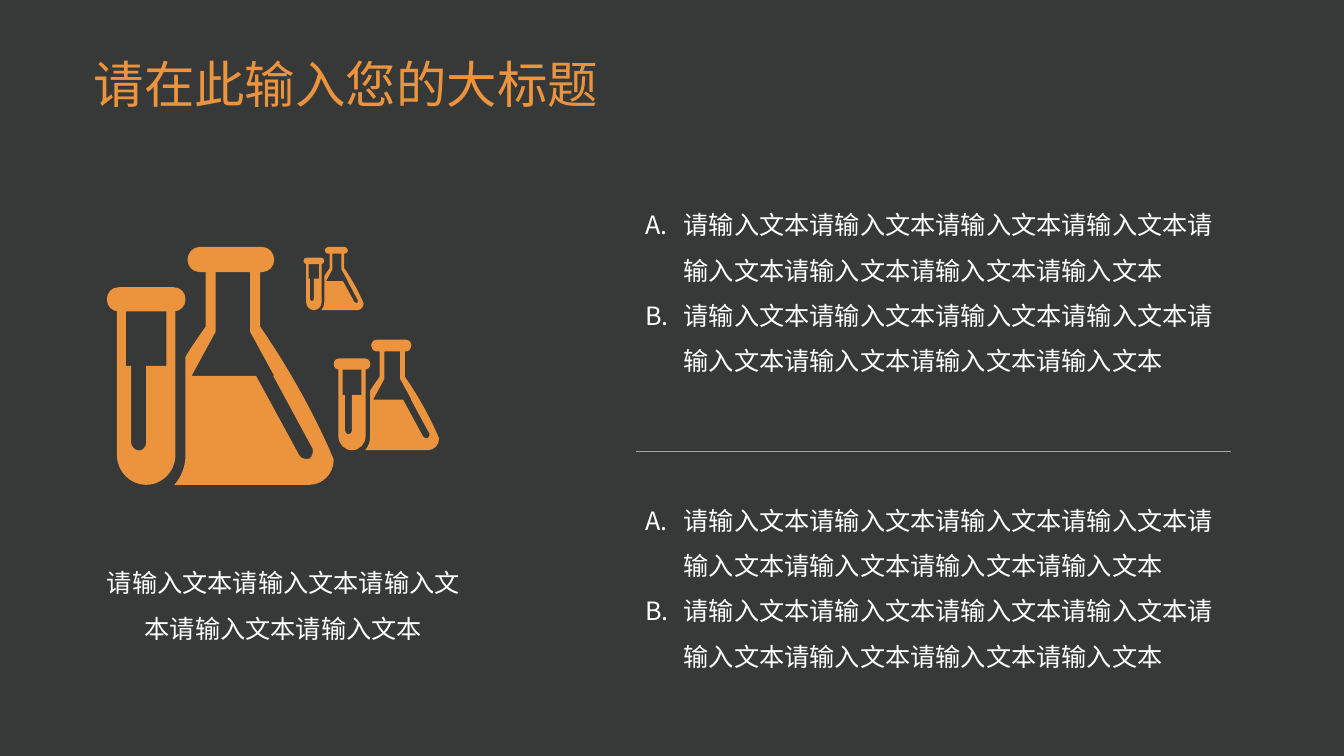
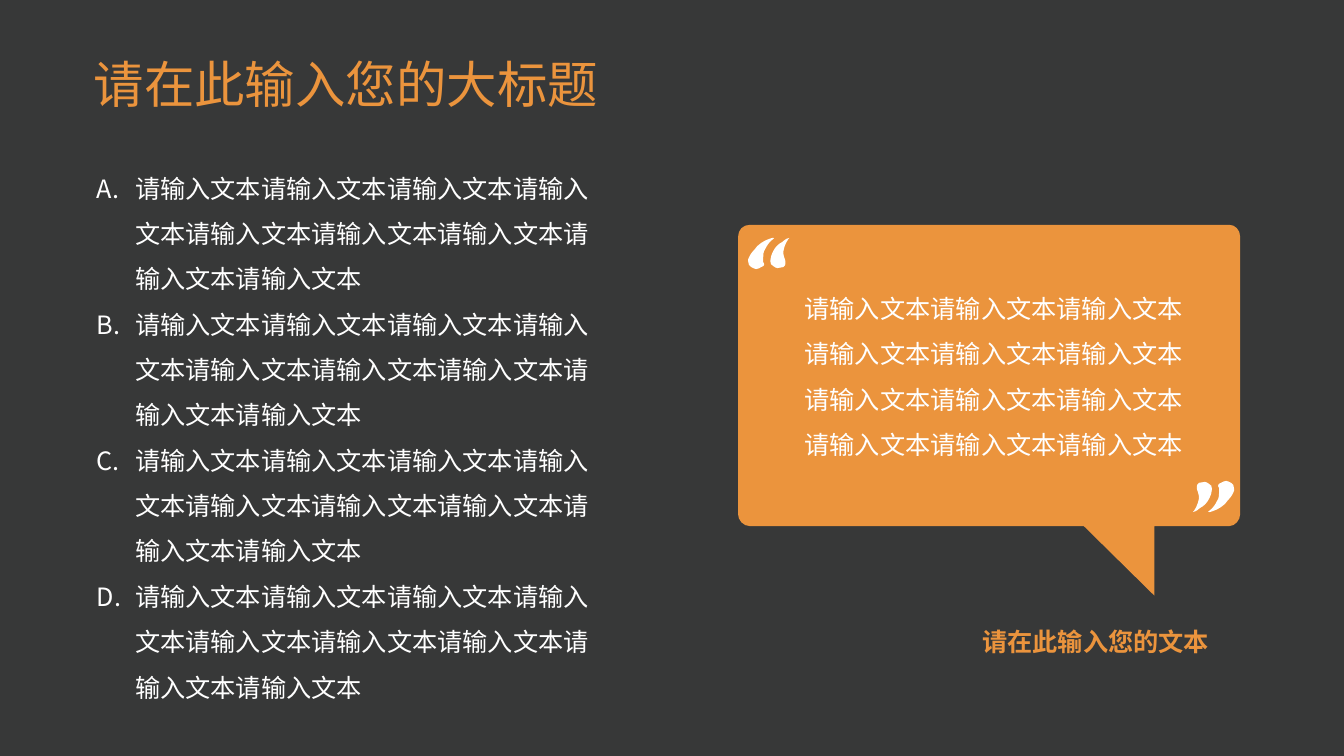
from lxml import etree
from pptx import Presentation
from pptx.dml.color import RGBColor
from pptx.enum import shapes, text
from pptx.oxml.ns import qn
from pptx.util import Inches, Pt

COLOURS = {"backdrop": "585858", "ground": "373838", "accent": "EB943D",
           "text": "FFFFFF", "rule": "A6A6A6"}
FONT = "Noto Sans CJK SC"
SLIDE_SIZE = (13.33, 7.5)
PHRASE = "请输入文本"
TITLE = "请在此输入您的大标题"
TITLE_BOX = (0.83, 0.4, 11.68, 0.93)

BENCH_LISTS = [
    ((6.3, 1.88, 5.87, 2.28), [PHRASE * 8] * 2),
    ((6.3, 4.81, 5.87, 2.28), [PHRASE * 8] * 2),
]
BENCH_CAPTION = ((0.93, 5.35, 3.76, 1.16), PHRASE * 5)
DIVIDER = (6.31, 4.48, 12.21, 4.48)
GLASSWARE_WIDTH = 2.26
GLASSWARE_PLACES = [(1.06, 2.45, 2.26), (3.01, 2.45, 0.6), (3.31, 3.37, 1.05)]

QUOTE_LISTS = [((0.86, 1.5, 5.19, 5.53), [PHRASE * 9] * 4)]
QUOTE = ((7.77, 2.61, 4.17, 2.1), PHRASE * 12)
SPEAKER = ((8.64, 6.06, 3.45, 0.46), "请在此输入您的文本")
BUBBLE_PLACE = (7.32, 2.23)
MARK_PLACES = [(7.42, 2.36, 0), (11.83, 4.77, 180)]

GLASSWARE = [
    [(152, 79), (152, 25), (154, 25), (161, 25, 166, 19, 166, 13),
     (166, 6, 161, 0, 154, 0), (92, 0), (85, 0, 80, 6, 80, 13),
     (80, 19, 85, 25, 92, 25), (98, 25), (98, 79), (91, 89, 84, 99, 78, 109),
     (78, 206), (78, 218, 74, 228, 67, 236), (201, 236),
     (214, 236, 225, 225, 225, 211), (225, 211, 201, 150, 152, 79)],
    [(201, 210), (197, 211, 193, 210, 191, 207), (148, 128), (84, 128),
     (108, 84), (108, 25), (142, 25), (142, 84), (166, 128), (165, 128),
     (204, 200), (205, 203, 204, 208, 201, 210)],
    [(68, 64), (66, 64), (73, 64, 78, 59, 78, 52), (78, 45, 73, 40, 66, 40),
     (12, 40), (5, 40, 0, 45, 0, 52), (0, 59, 5, 64, 12, 64), (10, 64),
     (10, 206), (10, 223, 23, 236, 39, 236), (55, 236, 68, 223, 68, 206)],
    [(59, 118), (39, 118), (39, 194), (39, 198, 36, 202, 32, 202),
     (28, 202, 24, 198, 24, 194), (24, 118), (19, 118), (19, 64), (59, 64)],
]
BUBBLE = [
    [(12, 0), (487, 0), (493, 0, 498, 5, 498, 12), (498, 287),
     (498, 293, 493, 299, 487, 299), (413, 299), (413, 368), (343, 299),
     (12, 299), (5, 299, 0, 293, 0, 287), (0, 12), (0, 5, 5, 0, 12, 0)],
]
MARKS = [
    [(41, 0), (41, 0, 41, 1, 40, 1), (38, 4, 37, 6, 36, 9),
     (35, 11, 35, 14, 35, 16), (35, 17, 36, 20, 37, 23),
     (37, 24, 37, 25, 37, 26), (37, 27, 36, 28, 35, 29),
     (33, 29, 31, 30, 29, 30), (28, 30, 26, 29, 25, 28),
     (23, 27, 22, 26, 22, 23), (22, 20, 23, 17, 25, 13),
     (27, 9, 30, 6, 34, 4), (37, 1, 40, 0, 41, 0)],
    [(25, 0), (26, 0, 26, 1, 25, 1), (21, 4, 19, 7, 17, 11),
     (15, 14, 15, 17, 15, 19), (15, 21, 15, 23, 15, 24),
     (15, 25, 16, 25, 16, 26), (16, 27, 15, 29, 13, 29),
     (11, 30, 10, 31, 8, 31), (7, 31, 5, 30, 3, 29), (1, 28, 0, 26, 0, 23),
     (0, 22, 0, 20, 1, 19), (2, 17, 3, 15, 6, 12), (8, 9, 10, 7, 13, 5),
     (16, 3, 18, 2, 21, 1), (23, 0, 25, 0, 25, 0)],
]


def colour(name):
    return RGBColor.from_string(COLOURS[name])


def paint(figure, ink):
    figure.shadow.inherit = False
    figure.fill.solid()
    figure.fill.fore_color.rgb = colour(ink)
    figure.line.fill.background()


def write(holder, box, paragraphs, size=18, ink="text", bold=False, spacing=1.5,
          align=text.PP_ALIGN.LEFT, anchor=text.MSO_ANCHOR.MIDDLE, lettered=False):
    holder.left, holder.top, holder.width, holder.height = map(Inches, box)
    frame = holder.text_frame
    frame.word_wrap = True
    frame.auto_size = text.MSO_AUTO_SIZE.NONE
    frame.vertical_anchor = anchor
    for index, words in enumerate(paragraphs):
        para = frame.add_paragraph() if index else frame.paragraphs[0]
        para.alignment = align
        para.line_spacing = spacing
        para.space_before = Pt(0)
        if lettered:
            props = para._p.get_or_add_pPr()
            props.set("marL", str(Inches(0.38)))
            props.set("indent", str(-Inches(0.38)))
            etree.SubElement(props, qn("a:buFont"), typeface=FONT)
            etree.SubElement(props, qn("a:buAutoNum"), type="alphaUcPeriod")
        run = para.add_run()
        run.text = words
        run.font.size = Pt(size)
        run.font.bold = bold
        run.font.color.rgb = colour(ink)
        run.font.name = FONT
        etree.SubElement(run._r.get_or_add_rPr(), qn("a:ea"), typeface=FONT)


def write_box(slide, box, words, **look):
    write(slide.shapes.add_textbox(*map(Inches, box)), box, [words], **look)


def corners(item):
    return [(item[i] * 100, item[i + 1] * 100) for i in range(0, len(item), 2)]


def bend(figure, contours):
    segments = iter(list(figure._element.iter(qn("a:lnTo"))))
    for item in (item for contour in contours for item in contour[1:]):
        segment = next(segments)
        if len(item) == 6:
            curve = etree.Element(qn("a:cubicBezTo"))
            segment.addprevious(curve)
            for part in (segment, next(segments), next(segments)):
                curve.append(part[0])
                part.getparent().remove(part)


def draw(slide, contours, left, top, ink, size=1, turn=0):
    pen = slide.shapes.build_freeform(*corners(contours[0][0])[0],
                                      scale=Inches(1) / 10000 * size)
    for index, (start, *rest) in enumerate(contours):
        if index:
            pen.move_to(*corners(start)[0])
        pen.add_line_segments([p for item in rest for p in corners(item)], close=True)
    figure = pen.convert_to_shape(Inches(left), Inches(top))
    bend(figure, contours)
    paint(figure, ink)
    figure.rotation = turn


def draw_divider(slide):
    rule = slide.shapes.add_connector(shapes.MSO_CONNECTOR.STRAIGHT, *map(Inches, DIVIDER))
    rule.line.color.rgb = colour("rule")
    rule.line.width = Pt(0.5)
    etree.SubElement(rule._element.spPr, qn("a:effectLst"))


def set_ground(deck, slide):
    master = deck.slide_master
    master.background.fill.solid()
    master.background.fill.fore_color.rgb = colour("backdrop")
    panel = slide.shapes.add_shape(shapes.MSO_SHAPE.RECTANGLE, 0, 0,
                                   *map(Inches, SLIDE_SIZE))
    paint(panel, "ground")
    master.shapes._spTree.insert(2, panel._element)


def start_slide(deck, layout, lists, anchor):
    slide = deck.slides.add_slide(deck.slide_layouts[layout])
    heading, *bodies = slide.placeholders
    write(heading, TITLE_BOX, [TITLE], size=36, ink="accent", spacing=0.9)
    for body, (box, entries) in zip(bodies, lists):
        write(body, box, entries, anchor=anchor, lettered=True)
    return slide


def main():
    deck = Presentation()
    deck.slide_width, deck.slide_height = map(Inches, SLIDE_SIZE)

    bench = start_slide(deck, 3, BENCH_LISTS, text.MSO_ANCHOR.TOP)
    set_ground(deck, bench)
    for left, top, width in GLASSWARE_PLACES:
        draw(bench, GLASSWARE, left, top, "accent", size=width / GLASSWARE_WIDTH)
    write_box(bench, *BENCH_CAPTION, align=text.PP_ALIGN.CENTER)
    draw_divider(bench)

    quotation = start_slide(deck, 1, QUOTE_LISTS, text.MSO_ANCHOR.MIDDLE)
    draw(quotation, BUBBLE, *BUBBLE_PLACE, "accent")
    for left, top, turn in MARK_PLACES:
        draw(quotation, MARKS, left, top, "text", turn=turn)
    write_box(quotation, *QUOTE, align=text.PP_ALIGN.CENTER)
    write_box(quotation, *SPEAKER, ink="accent", bold=True, align=text.PP_ALIGN.RIGHT)

    deck.save("out.pptx")


if __name__ == "__main__":
    main()
